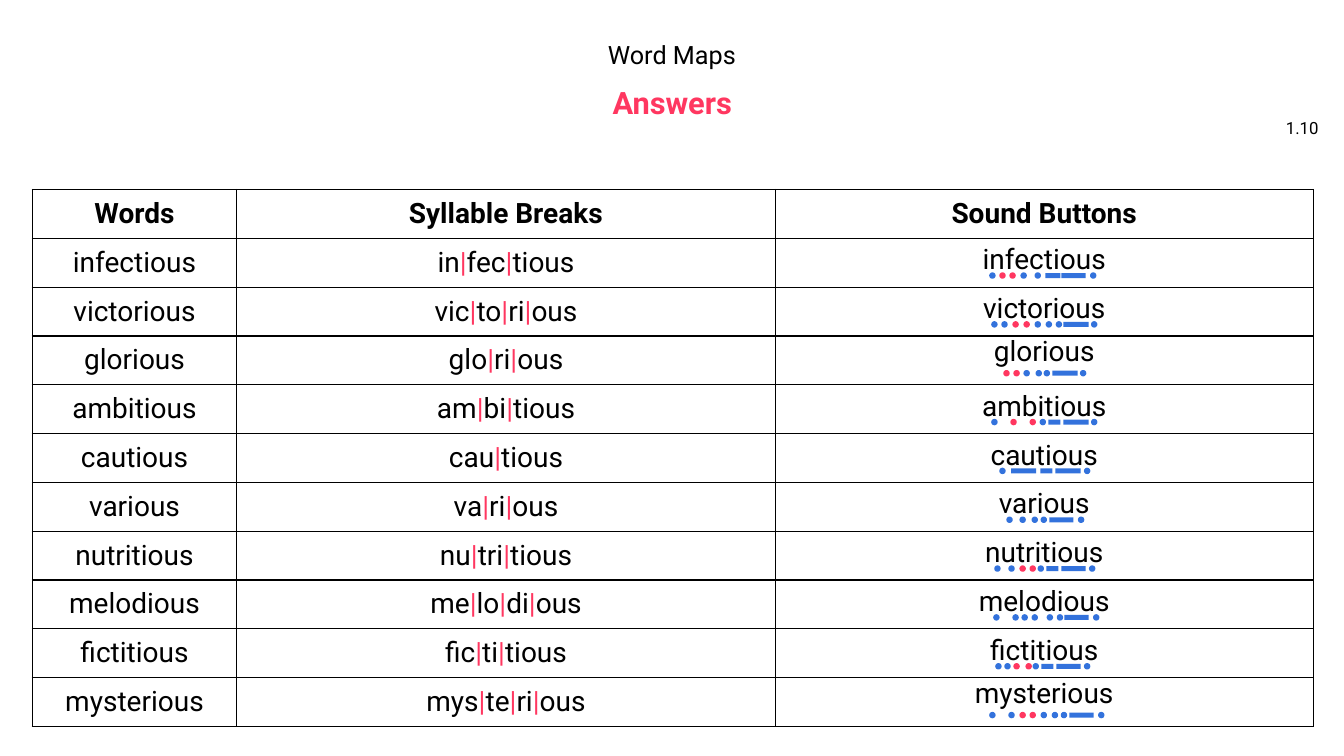
from lxml.etree import SubElement
from pptx import Presentation
from pptx.dml.color import RGBColor
from pptx.enum.shapes import MSO_SHAPE as Shape
from pptx.enum.text import MSO_ANCHOR as Anchor, PP_ALIGN as Align
from pptx.oxml.ns import qn
from pptx.util import Inches, Pt

# Grid of square units, ten to the inch
GRID = 0.1
SLIDE_SIZE = (133.33, 75)
BLACK, PINK, BLUE = "000000", "FF3760", "3372DC"

TABLE_LEFT, TABLE_TOP = 3.2, 18.8
COLUMN_WIDTHS = (20.3, 53.4, 53.4)
ROW_HEIGHT = 53.3 / 11
HEADINGS = ("Words", "Syllable Breaks", "Sound Buttons")
BUTTON_DROP = 0.71  # share of a row above its sound buttons
BUTTON_SIZE = 0.5

# Syllables, blue dots, pink dots, bars as (left, width)
WORDS = [
    ("in|fec|tious", (98.2, 101.3, 102.7, 108.2), (99.2, 100.2),
     ((103.7, 1.5), (105.3, 2.4))),
    ("vic|to|ri|ous", (98.4, 99.4, 102.7, 103.8, 104.8, 108.3),
     (100.5, 101.6), ((105.5, 2.5),)),
    ("glo|ri|ous", (101.6, 102.8, 103.6, 107.2), (99.6, 100.6),
     ((104.4, 2.5),)),
    ("am|bi|tious", (98.4, 103.2, 108.3), (100.3, 102.2),
     ((104, 1.2), (105.5, 2.5))),
    ("cau|tious", (99.2, 107.6), (),
     ((100.3, 2.5), (103.2, 1.2), (104.7, 2.5))),
    ("va|ri|ous", (99.9, 101.2, 102.4, 103.3, 107), (), ((104.1, 2.4),)),
    ("nu|tri|tious", (98.7, 100.1, 103, 108.1), (101.2, 102.2),
     ((103.8, 1.2), (105.3, 2.4))),
    ("me|lo|di|ous", (98.6, 100.5, 101.4, 102.4, 103.9, 104.9, 108.5), (),
     ((105.6, 2.4),)),
    ("fic|ti|tious", (98.8, 99.7, 102.5, 107.6), (100.6, 101.8),
     ((103.3, 1.2), (104.8, 2.4))),
    ("mys|te|ri|ous", (98.2, 100.1, 103.3, 104.4, 105.3, 109),
     (101.2, 102.2), ((106.1, 2.4),)),
]
TOP_ALIGNED = ("glorious", "mysterious")


def units(*lengths):
    return [Inches(length * GRID) for length in lengths]


def color(value):
    return RGBColor.from_string(value)


class WordMapSlide:
    font_name = "Roboto"

    def __init__(self, presentation):
        self.slide = presentation.slides.add_slide(presentation.slide_layouts[6])

    def style(self, run, size, ink=BLACK, bold=False):
        run.font.name, run.font.size, run.font.bold = self.font_name, Pt(size), bold
        run.font.color.rgb = color(ink)

    def text(self, box, content, size, align=Align.CENTER, anchor=Anchor.MIDDLE,
             ink=BLACK, bold=False, spacing=None):
        text_frame = self.slide.shapes.add_textbox(*units(*box)).text_frame
        text_frame.word_wrap = True
        text_frame.vertical_anchor = anchor
        text_frame.text = content
        paragraph = text_frame.paragraphs[0]
        paragraph.alignment = align
        paragraph.line_spacing = spacing
        self.style(paragraph.runs[0], size, ink, bold)

    def table(self, row_count):
        size = (sum(COLUMN_WIDTHS), ROW_HEIGHT * row_count)
        frame = self.slide.shapes.add_table(
            row_count, len(COLUMN_WIDTHS), *units(TABLE_LEFT, TABLE_TOP, *size))
        table = frame.table
        table.first_row = table.horz_banding = False
        for column, width in zip(table.columns, units(*COLUMN_WIDTHS)):
            column.width = width
        for row in table.rows:
            row.height = units(ROW_HEIGHT)[0]
        return table

    def cell(self, cell, content, bold=False, anchor=Anchor.MIDDLE):
        paragraph = cell.text_frame.paragraphs[0]
        paragraph.alignment = Align.CENTER
        for index, syllable in enumerate(content.split("|")):
            for piece, ink in (("|", PINK), (syllable, BLACK))[index == 0:]:
                run = paragraph.add_run()
                run.text = piece
                self.style(run, 20, ink, bold)
        cell.vertical_anchor = anchor
        # Borders come before the fill in the cell properties
        properties = cell._tc.get_or_add_tcPr()
        for side in ("a:lnL", "a:lnR", "a:lnT", "a:lnB"):
            border = SubElement(properties, qn(side), w=str(Pt(1)))
            fill = SubElement(border, qn("a:solidFill"))
            SubElement(fill, qn("a:srgbClr"), val=BLACK)
        cell.fill.background()

    def button(self, group, kind, left, top, width, ink):
        shape = group.shapes.add_shape(kind, *units(left, top, width, BUTTON_SIZE))
        shape.shadow.inherit = False
        shape.fill.solid()
        shape.fill.fore_color.rgb = color(ink)
        if kind == Shape.OVAL:
            shape.line.color.rgb = color(ink)
            shape.line.width = Pt(1)
        else:
            shape.line.fill.background()

    def sound_buttons(self, row, blue_dots, pink_dots, bars):
        group = self.slide.shapes.add_group_shape()
        top = TABLE_TOP + (row + BUTTON_DROP) * ROW_HEIGHT
        for ink, dots in ((BLUE, blue_dots), (PINK, pink_dots)):
            for left in dots:
                self.button(group, Shape.OVAL, left, top, BUTTON_SIZE, ink)
        for left, width in bars:
            self.button(group, Shape.RECTANGLE, left, top, width, BLUE)


def main():
    presentation = Presentation()
    presentation.slide_width, presentation.slide_height = units(*SLIDE_SIZE)
    page = WordMapSlide(presentation)

    # Headings and page number
    page.text((38.2, 3.7, 56.9, 3.5), "Word Maps", 18, anchor=Anchor.TOP, spacing=0.9)
    page.text((20.9, 8.4, 91.6, 4), "Answers", 22, ink=PINK, bold=True, spacing=0.9)
    page.text((125.5, 10.7, 6.3, 4), "1.10", 12, align=Align.RIGHT)

    # Word table
    table = page.table(len(WORDS) + 1)
    for column, heading in enumerate(HEADINGS):
        page.cell(table.cell(0, column), heading, bold=True)
    for row, (syllables, *buttons) in enumerate(WORDS, start=1):
        word = syllables.replace("|", "")
        sound_cell = table.cell(row, 2)
        page.cell(table.cell(row, 0), word)
        page.cell(table.cell(row, 1), syllables)
        page.cell(sound_cell, word,
                  anchor=Anchor.TOP if word in TOP_ALIGNED else Anchor.MIDDLE)
        sound_cell.margin_top = 0
        page.sound_buttons(row, *buttons)

    presentation.save("out.pptx")


if __name__ == "__main__":
    main()
